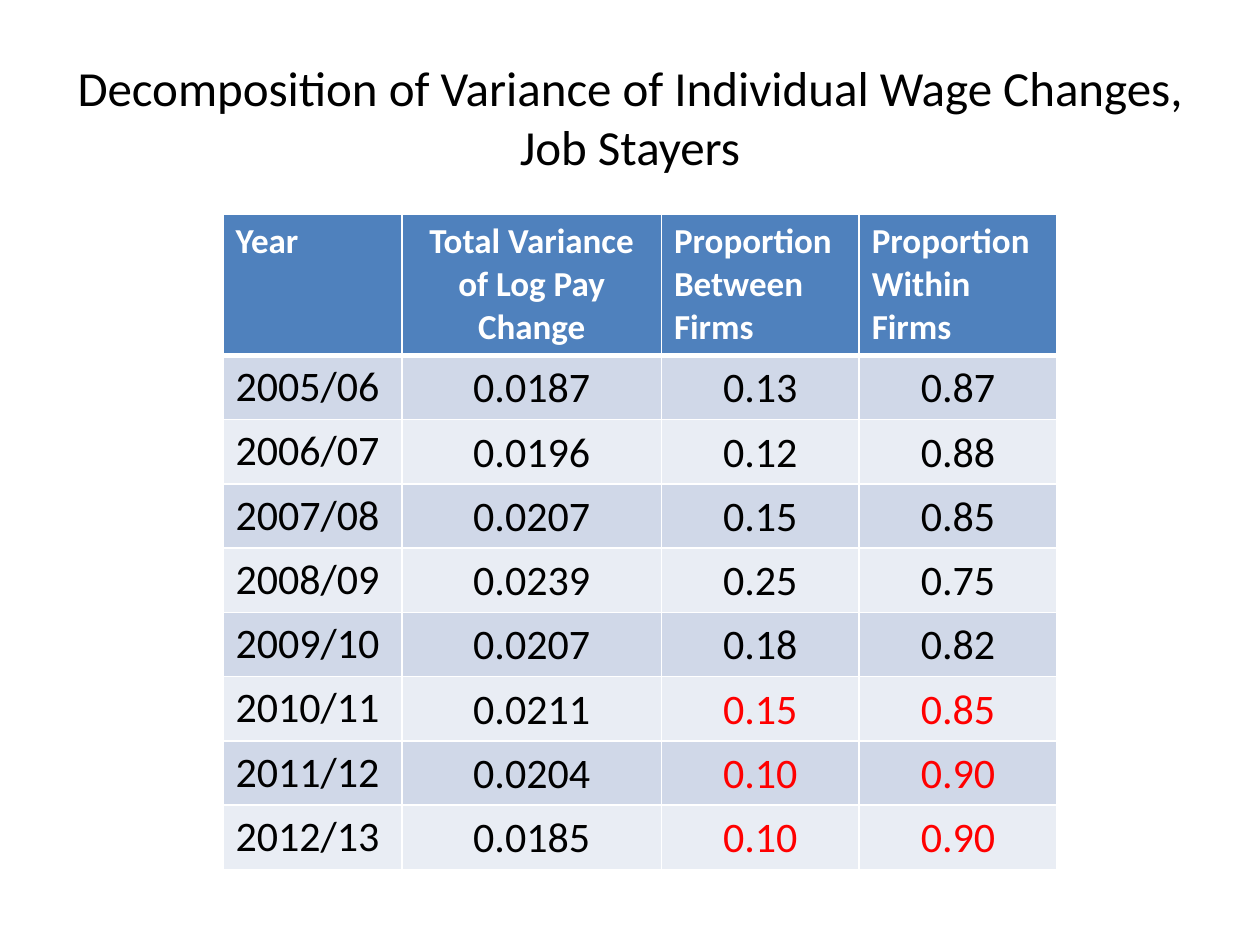
from lxml import etree
from pptx import Presentation
from pptx.dml.color import RGBColor
from pptx.enum.text import MSO_ANCHOR, PP_ALIGN
from pptx.oxml.ns import qn
from pptx.util import Inches, Pt

LEFT, CENTER = PP_ALIGN.LEFT, PP_ALIGN.CENTER
MIDDLE = MSO_ANCHOR.MIDDLE
TITLE_ONLY = 5
WIDTH, HEIGHT = 10, 7.5

TITLE = "Decomposition of Variance of Individual Wage Changes, Job Stayers"
HEADINGS = ["Year", "Total Variance of Log Pay Change",
            "Proportion Between Firms", "Proportion Within Firms"]
VARIANCES = [
    ["2005/06", "0.0187", "0.13", "0.87"],
    ["2006/07", "0.0196", "0.12", "0.88"],
    ["2007/08", "0.0207", "0.15", "0.85"],
    ["2008/09", "0.0239", "0.25", "0.75"],
    ["2009/10", "0.0207", "0.18", "0.82"],
    ["2010/11", "0.0211", "0.15", "0.85"],
    ["2011/12", "0.0204", "0.10", "0.90"],
    ["2012/13", "0.0185", "0.10", "0.90"],
]
COLUMN_WIDTHS = [1.42, 2.06, 1.57, 1.57]
HEADER_HEIGHT, ROW_HEIGHT = 1.02, 0.51
FIRST_RED_ROW, FIRST_RED_COLUMN = 6, 2


def color(value):
    return RGBColor.from_string(value)


def apply(target, values):
    for name, value in values.items():
        setattr(target, name, value)


class SlideBuilder:
    font = "Calibri"
    text, accent, line, highlight = "000000", "4F81BD", "FFFFFF", "FF0000"
    bands = ["D0D8E8", "E9EDF4"]
    value_margins = {"margin_left": Inches(0.07), "margin_right": Inches(0.07),
                     "margin_top": 0, "margin_bottom": 0}

    def __init__(self, deck):
        self.deck = deck
        self.page = deck.slides.add_slide(deck.slide_layouts[TITLE_ONLY])

    def place(self, left, top, width, height):
        across, down = self.deck.slide_width, self.deck.slide_height
        return {"left": int(left * across), "top": int(top * down),
                "width": int(width * across), "height": int(height * down)}

    def wording(self, frame, words, ink, size, bold=False, **layout):
        para = frame.paragraphs[0]
        apply(para, layout)
        span = para.add_run()
        span.text = words
        apply(span.font, {"name": self.font, "size": Pt(size), "bold": bold})
        span.font.color.rgb = color(ink)

    def title(self, words, *area):
        box = self.page.shapes.title
        apply(box, self.place(*area))
        apply(box.text_frame, {"vertical_anchor": MIDDLE, "word_wrap": True})
        self.wording(box.text_frame, words, self.text, 28, alignment=CENTER)

    def borders(self, cell, row):
        properties = cell._tc.get_or_add_tcPr()
        widths = {"lnL": 1, "lnR": 1, "lnT": 3 if row == 1 else 1,
                  "lnB": 3 if row == 0 else 1}
        for side, width in widths.items():
            edge = etree.SubElement(properties, qn("a:" + side), w=str(Pt(width)))
            fill = etree.SubElement(edge, qn("a:solidFill"))
            etree.SubElement(fill, qn("a:srgbClr"), val=self.line)

    def cell(self, cell, row, column, words):
        self.borders(cell, row)
        cell.fill.solid()
        if row == 0:
            cell.fill.fore_color.rgb = color(self.accent)
            self.wording(cell.text_frame, words, self.line, 20, True,
                         alignment=CENTER if column == 1 else LEFT)
            return
        cell.fill.fore_color.rgb = color(self.bands[(row - 1) % 2])
        if column == 0:
            self.wording(cell.text_frame, words, self.text, 24, alignment=LEFT)
            return
        apply(cell, self.value_margins)
        red = row >= FIRST_RED_ROW and column >= FIRST_RED_COLUMN
        self.wording(cell.text_frame, words, self.highlight if red else self.text,
                     24, alignment=CENTER, line_spacing=1.15)

    def table(self, rows, *area):
        frame = self.page.shapes.add_table(len(rows), len(rows[0]), **self.place(*area))
        grid = frame.table
        for column, width in zip(grid.columns, COLUMN_WIDTHS):
            column.width = Inches(width)
        for row, entries in enumerate(rows):
            grid.rows[row].height = Inches(ROW_HEIGHT if row else HEADER_HEIGHT)
            for column, words in enumerate(entries):
                self.cell(grid.cell(row, column), row, column, words)


def main():
    deck = Presentation()
    apply(deck, {"slide_width": Inches(WIDTH), "slide_height": Inches(HEIGHT)})
    builder = SlideBuilder(deck)
    builder.title(TITLE, 0.05, 0.04, 0.9, 1.25 / HEIGHT)
    table_height = HEADER_HEIGHT + ROW_HEIGHT * len(VARIANCES)
    builder.table([HEADINGS] + VARIANCES, 1.77 / WIDTH, 1.7 / HEIGHT,
                  sum(COLUMN_WIDTHS) / WIDTH, table_height / HEIGHT)
    deck.save("out.pptx")


if __name__ == "__main__":
    main()
